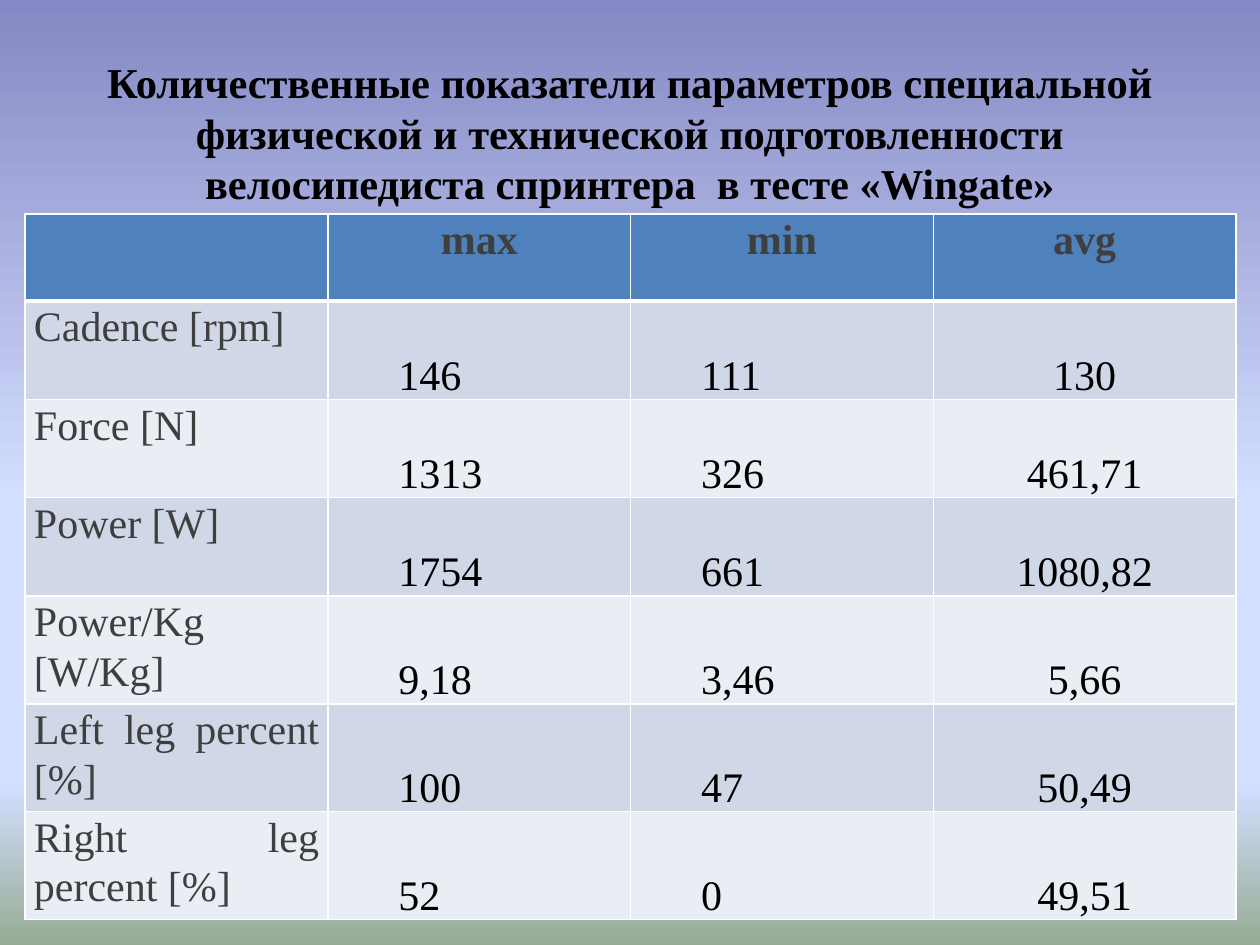
import pptx
import pptx.util
import pptx.oxml
import pptx.oxml.ns
import pptx.dml.color
import pptx.enum.text
from lxml import etree

Inches, Pt = pptx.util.Inches, pptx.util.Pt
qn = pptx.oxml.ns.qn
ALIGN = pptx.enum.text.PP_ALIGN
ANCHOR = pptx.enum.text.MSO_ANCHOR

TITLE = ("Количественные показатели параметров специальной физической и "
         "технической подготовленности велосипедиста спринтера  в тесте «Wingate»")
HEADER = ["", "max", "min", "avg"]
ROWS = [
    ["Cadence [rpm]", "146", "111", "130"],
    ["Force [N]", "1313", "326", "461,71"],
    ["Power [W]", "1754", "661", "1080,82"],
    ["Power/Kg [W/Kg]", "9,18", "3,46", "5,66"],
    ["Left leg percent [%]", "100", "47", "50,49"],
    ["Right leg percent [%]", "52", "0", "49,51"],
]
COLORS = {"header": "4F81BD", "odd": "D0D8E8", "even": "E9EDF4",
          "border": "FFFFFF", "label": "3F3F3F", "value": "000000"}
GRADIENT = [(0, "8488C4"), (53, "D4DEFF"), (83, "D4DEFF"), (100, "96AB94")]
FONT = "Times New Roman"


def rgb(name):
    return pptx.dml.color.RGBColor.from_string(COLORS[name])


def paint_background(slide):
    fill = slide.background.fill
    fill.gradient()
    fill.gradient_angle = 270
    stops = next(slide.element.iter(qn("a:gsLst")))
    for stop in list(stops):
        stops.remove(stop)
    for percent, color in GRADIENT:
        gs = etree.SubElement(stops, qn("a:gs"), pos=str(percent * 1000))
        etree.SubElement(gs, qn("a:srgbClr"), val=color)


def add_run(p, text, size, color, bold):
    r = p.add_run()
    r.text = text
    r.font.name = FONT
    r.font.size = Pt(size)
    r.font.bold = bold
    r.font.color.rgb = rgb(color)


def set_borders(cell, widths):
    tcPr = cell._tc.get_or_add_tcPr()
    for side, width in widths.items():
        ln = etree.SubElement(tcPr, qn("a:ln" + side), w=str(Pt(width)))
        solid = etree.SubElement(ln, qn("a:solidFill"))
        etree.SubElement(solid, qn("a:srgbClr"), val=COLORS["border"])


def fill_cell(cell, text, row, col):
    is_header, is_label = row == 0, col == 0
    set_borders(cell, {"L": 1, "R": 1, "T": 3 if row == 1 else 1,
                       "B": 3 if is_header else 1})
    cell.fill.solid()
    cell.fill.fore_color.rgb = rgb("header" if is_header else "odd" if row % 2 else "even")
    cell.margin_left = cell.margin_right = Inches(0.07)
    cell.margin_top = cell.margin_bottom = 0
    if not text:
        return
    on_top = is_header or is_label
    cell.vertical_anchor = ANCHOR.TOP if on_top else ANCHOR.BOTTOM
    p = cell.text_frame.paragraphs[0]
    p.line_spacing = 1.07
    p.alignment = ALIGN.CENTER if is_header or col == 3 else ALIGN.JUSTIFY
    if not is_header and col in (1, 2):
        p._p.get_or_add_pPr().set("indent", str(Inches(0.49)))
    add_run(p, text, 24, "label" if on_top else "value", is_header)


def add_title(slide):
    tf = slide.shapes.add_textbox(Inches(0.5), Inches(0.3), Inches(9), Inches(1.4)).text_frame
    tf.word_wrap = True
    tf.vertical_anchor = ANCHOR.MIDDLE
    tf.margin_top = Inches(0.15)
    p = tf.paragraphs[0]
    p.alignment = ALIGN.CENTER
    p.line_spacing = Pt(29)
    add_run(p, TITLE, 24.3, "value", True)


def add_results(slide):
    data = [HEADER] + ROWS
    table = slide.shapes.add_table(len(data), len(HEADER), Inches(0.2), Inches(1.7),
                                   Inches(9.61), Inches(5.37)).table
    for i, values in enumerate(data):
        table.rows[i].height = Inches(0.78 if i else 0.69)
        for j, text in enumerate(values):
            fill_cell(table.cell(i, j), text, i, j)


def main():
    prs = pptx.Presentation()
    prs.slide_width, prs.slide_height = Inches(10), Inches(7.5)
    slide = prs.slides.add_slide(prs.slide_layouts[6])
    paint_background(slide)
    add_title(slide)
    add_results(slide)
    prs.save("out.pptx")


if __name__ == "__main__":
    main()
